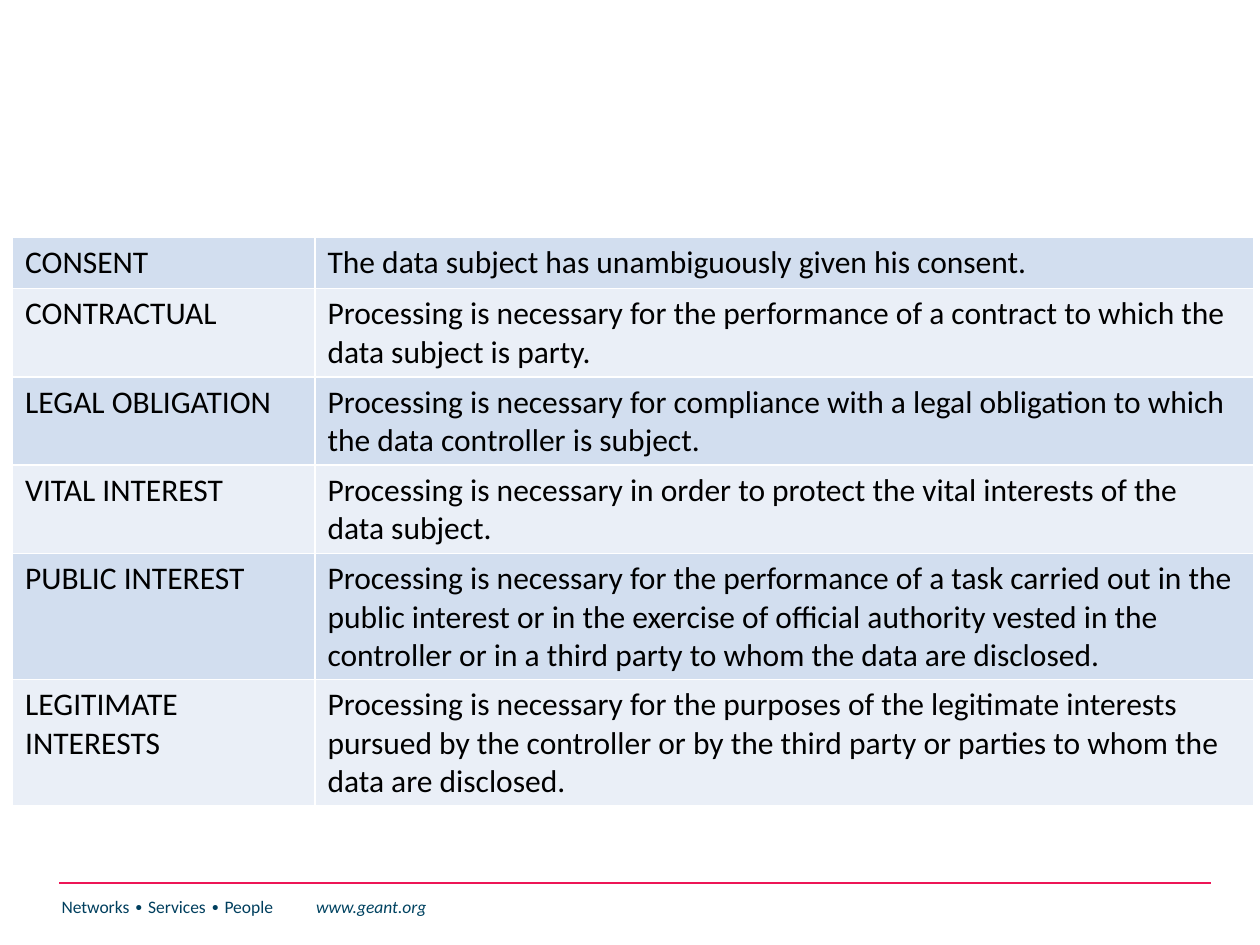
from lxml import etree
from pptx import Presentation, util as u
from pptx.dml.color import RGBColor
from pptx.enum import shapes, text
from pptx.oxml import ns

COLOURS = {
    "band": "D2DEEF",
    "light_band": "EAEFF7",
    "body": "000000",
    "rule": "ED1556",
    "motto": "003F5E",
    "address": "004361",
}


def add_run(paragraph, words, size=18, colour="body", italic=False):
    run = paragraph.add_run()
    run.text = words
    run.font.name = "Calibri"
    run.font.size = u.Pt(size)
    run.font.italic = italic
    run.font.color.rgb = RGBColor.from_string(COLOURS[colour])


deck = Presentation()
deck.slide_width, deck.slide_height = u.Inches(10), u.Inches(7.5)
slide = deck.slides.add_slide(deck.slide_layouts[6])

# Footer rule
rule = slide.shapes.add_connector(
    shapes.MSO_CONNECTOR.STRAIGHT,
    u.Inches(0.47), u.Inches(7.01), u.Inches(9.61), u.Inches(7.01))
rule.line.color.rgb = RGBColor.from_string(COLOURS["rule"])
rule.line.width = u.Pt(1)
etree.SubElement(rule._element.spPr, ns.qn("a:effectLst"))

# Footer motto and web address, set apart by a tab stop
footer = slide.shapes.add_textbox(
    u.Inches(0.39), u.Inches(7.06), u.Inches(3.41), u.Inches(0.44))
footer.text_frame.word_wrap = True
footer_line = footer.text_frame.paragraphs[0]
tab_stops = etree.SubElement(footer_line._p.get_or_add_pPr(), ns.qn("a:tabLst"))
etree.SubElement(tab_stops, ns.qn("a:tab"), pos=str(u.Inches(2.02)), algn="l")
add_run(footer_line, "Networks ∙ Services ∙ People\t", size=10, colour="motto")
add_run(footer_line, "www.geant.org", size=10, colour="address", italic=True)

# Legal grounds for processing
grounds = [
    ("CONSENT", "The data subject has unambiguously given his consent."),
    ("CONTRACTUAL", "Processing is necessary for the performance of a contract "
     "to which the data subject is party."),
    ("LEGAL OBLIGATION", "Processing is necessary for compliance with a legal "
     "obligation to which the data controller is subject."),
    ("VITAL INTEREST", "Processing is necessary in order to protect the vital "
     "interests of the data subject."),
    ("PUBLIC INTEREST", "Processing is necessary for the performance of a task "
     "carried out in the public interest or in the exercise of official "
     "authority vested in the controller or in a third party to whom the data "
     "are disclosed."),
    ("LEGITIMATE INTERESTS", "Processing is necessary for the purposes of the "
     "legitimate interests pursued by the controller or by the third party or "
     "parties to whom the data are disclosed."),
]
row_height = u.Inches(0.41)
grounds_table = slide.shapes.add_table(
    len(grounds), 2, u.Inches(0.1), u.Inches(1.88),
    u.Inches(9.85), row_height * len(grounds)).table
grounds_table.first_row = False
grounds_table.columns[0].width = u.Inches(2.4)
grounds_table.columns[1].width = u.Inches(7.45)

for row, ground in enumerate(grounds):
    grounds_table.rows[row].height = row_height
    band = COLOURS["light_band" if row % 2 else "band"]
    for column, words in enumerate(ground):
        cell = grounds_table.cell(row, column)
        cell.fill.solid()
        cell.fill.fore_color.rgb = RGBColor.from_string(band)
        cell.vertical_anchor = text.MSO_ANCHOR.TOP
        add_run(cell.text_frame.paragraphs[0], words)

deck.save("out.pptx")
